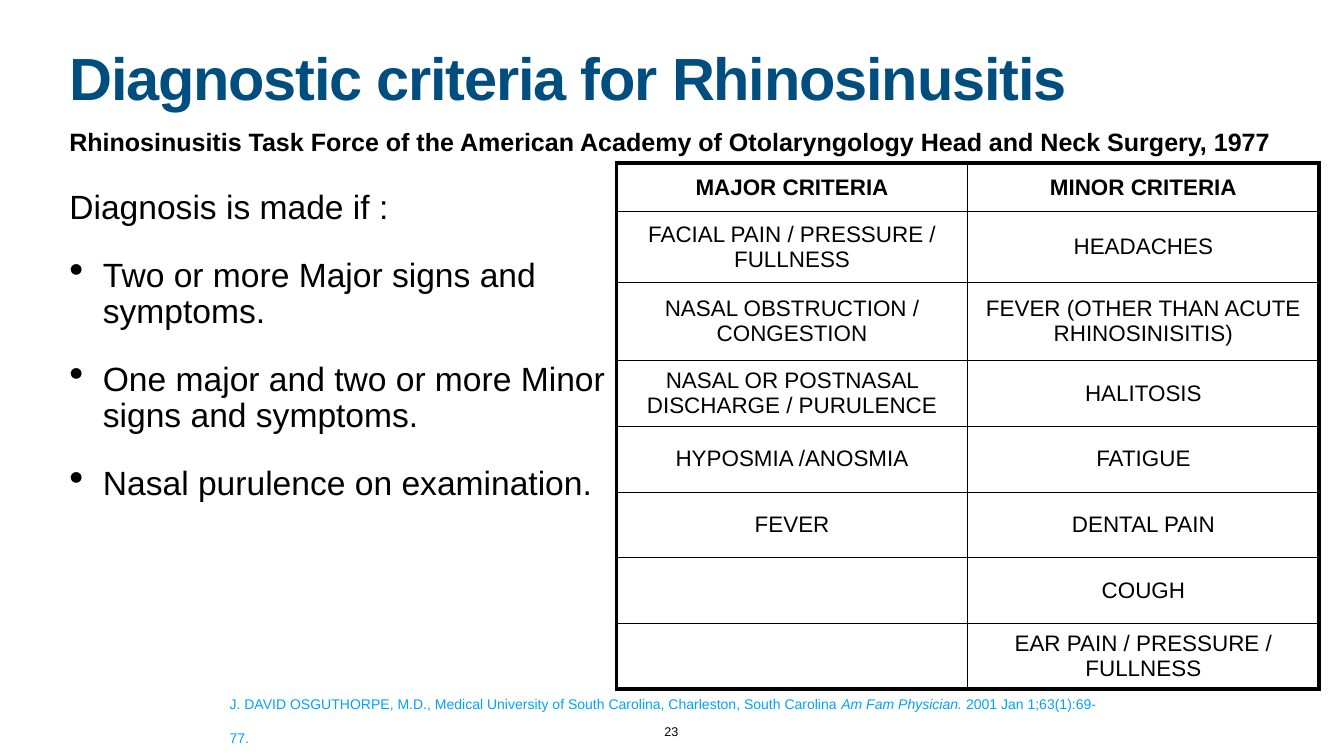
from lxml.etree import SubElement
from pptx import Presentation
from pptx.dml.color import RGBColor
from pptx.enum.text import MSO_ANCHOR as Anchor, MSO_AUTO_SIZE as AutoSize, PP_ALIGN as Align
from pptx.oxml.ns import qn
from pptx.util import Pt

TITLE = "Diagnostic criteria for Rhinosinusitis"
SUBTITLE = ("Rhinosinusitis Task Force of the American Academy of "
            "Otolaryngology Head and Neck Surgery, 1977")
INTRO = "Diagnosis is made if :"
RULES = [
    "Two or more Major signs and symptoms.",
    "One major and two or more Minor signs and symptoms.",
    "Nasal purulence on examination.",
]
CRITERIA = [
    ("MAJOR CRITERIA", "MINOR CRITERIA"),
    ("FACIAL PAIN / PRESSURE / FULLNESS", "HEADACHES"),
    ("NASAL OBSTRUCTION / CONGESTION", "FEVER (OTHER THAN ACUTE RHINOSINISITIS)"),
    ("NASAL OR POSTNASAL DISCHARGE / PURULENCE", "HALITOSIS"),
    ("HYPOSMIA /ANOSMIA", "FATIGUE"),
    ("FEVER", "DENTAL PAIN"),
    ("", "COUGH"),
    ("", "EAR PAIN / PRESSURE / FULLNESS"),
]
CITATION = [  # text, italic
    ("J. DAVID OSGUTHORPE, M.D., Medical University of South Carolina, "
     "Charleston, South Carolina ", False),
    ("Am Fam Physician.", True),
    (" 2001 Jan 1;63(1):69-77.", False),
]
PAGE_NUMBER = "23"

FONT = "Arial"
BLACK, NAVY, SKY = "000000", "004D80", "00A2FF"
LEFT, WIDE = 95, 1730
INSET = 4
INDENT = 48
ROW_HEIGHTS = [69, 101.5, 111.5] + [93.8] * 5
COLUMN_WIDTH = 501.9
THIN, THICK = 1, 6


def color(hex_value):
    return RGBColor.from_string(hex_value)


def set_insets(target):
    target.margin_left = target.margin_right = Pt(INSET)
    target.margin_top = target.margin_bottom = Pt(INSET)


def add_box(slide, left, top, width, height, anchor=Anchor.TOP, wrap=True):
    frame = slide.shapes.add_textbox(Pt(left), Pt(top), Pt(width), Pt(height)).text_frame
    frame.word_wrap = wrap
    frame.vertical_anchor = anchor
    set_insets(frame)
    return frame


def add_run(paragraph, text, size, hex_value=BLACK, bold=False, italic=False):
    run = paragraph.add_run()
    run.text = text
    font = run.font
    font.name, font.size, font.bold, font.italic = FONT, Pt(size), bold, italic
    font.color.rgb = color(hex_value)
    return run


def add_bullet(paragraph):
    properties = paragraph._p.get_or_add_pPr()
    properties.set("marL", str(Pt(INDENT)))
    properties.set("indent", str(-Pt(INDENT)))
    SubElement(properties, qn("a:buSzPct"), val="123000")
    SubElement(properties, qn("a:buChar"), char="•")


def set_borders(cell, widths):
    """Draw black borders; widths are left, right, top, bottom."""
    properties = cell._tc.get_or_add_tcPr()
    for side, width in zip("LRTB", widths):
        line = SubElement(properties, qn(f"a:ln{side}"), w=str(Pt(width)))
        fill = SubElement(line, qn("a:solidFill"))
        SubElement(fill, qn("a:srgbClr"), val=BLACK)


def add_headings(slide):
    paragraph = add_box(slide, LEFT, 75, WIDE, 113).paragraphs[0]
    paragraph.line_spacing = 0.8
    run = add_run(paragraph, TITLE, 85, NAVY, bold=True)
    run.font._element.set("spc", "-170")
    paragraph = add_box(slide, LEFT, 177, WIDE, 73).paragraphs[0]
    add_run(paragraph, SUBTITLE, 35.8, bold=True)


def add_rules(slide):
    frame = add_box(slide, LEFT, 268.5, 777, 716)
    intro = frame.paragraphs[0]
    intro.line_spacing = 0.9
    add_run(intro, INTRO, 48)
    for text in RULES:
        paragraph = frame.add_paragraph()
        add_bullet(paragraph)
        paragraph.line_spacing = 0.9
        paragraph.space_before = Pt(45)
        add_run(paragraph, text, 48)


def add_criteria(slide):
    row_count, column_count = len(CRITERIA), len(CRITERIA[0])
    table = slide.shapes.add_table(
        row_count, column_count, Pt(880.6), Pt(233.3),
        Pt(COLUMN_WIDTH * column_count), Pt(sum(ROW_HEIGHTS))).table
    table.first_row = table.horz_banding = False
    for column in table.columns:
        column.width = Pt(COLUMN_WIDTH)
    for r, texts in enumerate(CRITERIA):
        table.rows[r].height = Pt(ROW_HEIGHTS[r])
        for c, text in enumerate(texts):
            cell = table.cell(r, c)
            set_insets(cell)
            cell.vertical_anchor = Anchor.MIDDLE
            outer = (c == 0, c == column_count - 1, r == 0, r == row_count - 1)
            set_borders(cell, [THICK if edge else THIN for edge in outer])
            cell.fill.background()
            if text:
                paragraph = cell.text_frame.paragraphs[0]
                paragraph.alignment = Align.CENTER
                add_run(paragraph, text, 32, bold=r == 0)


def add_footer(slide):
    frame = add_box(slide, 324, 1002, 1272, 32, Anchor.MIDDLE)
    frame.auto_size = AutoSize.SHAPE_TO_FIT_TEXT
    paragraph = frame.paragraphs[0]
    paragraph.line_spacing = Pt(48)
    for text, italic in CITATION:
        add_run(paragraph, text, 20, SKY, italic=italic)
    frame = add_box(slide, 944.5, 1030.5, 29, 29.5, Anchor.BOTTOM, wrap=False)
    frame.auto_size = AutoSize.SHAPE_TO_FIT_TEXT
    paragraph = frame.paragraphs[0]
    paragraph.alignment = Align.CENTER
    add_run(paragraph, PAGE_NUMBER, 18)


def main():
    presentation = Presentation()
    presentation.slide_width, presentation.slide_height = Pt(1920), Pt(1080)
    slide = presentation.slides.add_slide(presentation.slide_layouts[6])
    add_headings(slide)
    add_rules(slide)
    add_criteria(slide)
    add_footer(slide)
    presentation.save("out.pptx")


if __name__ == "__main__":
    main()
